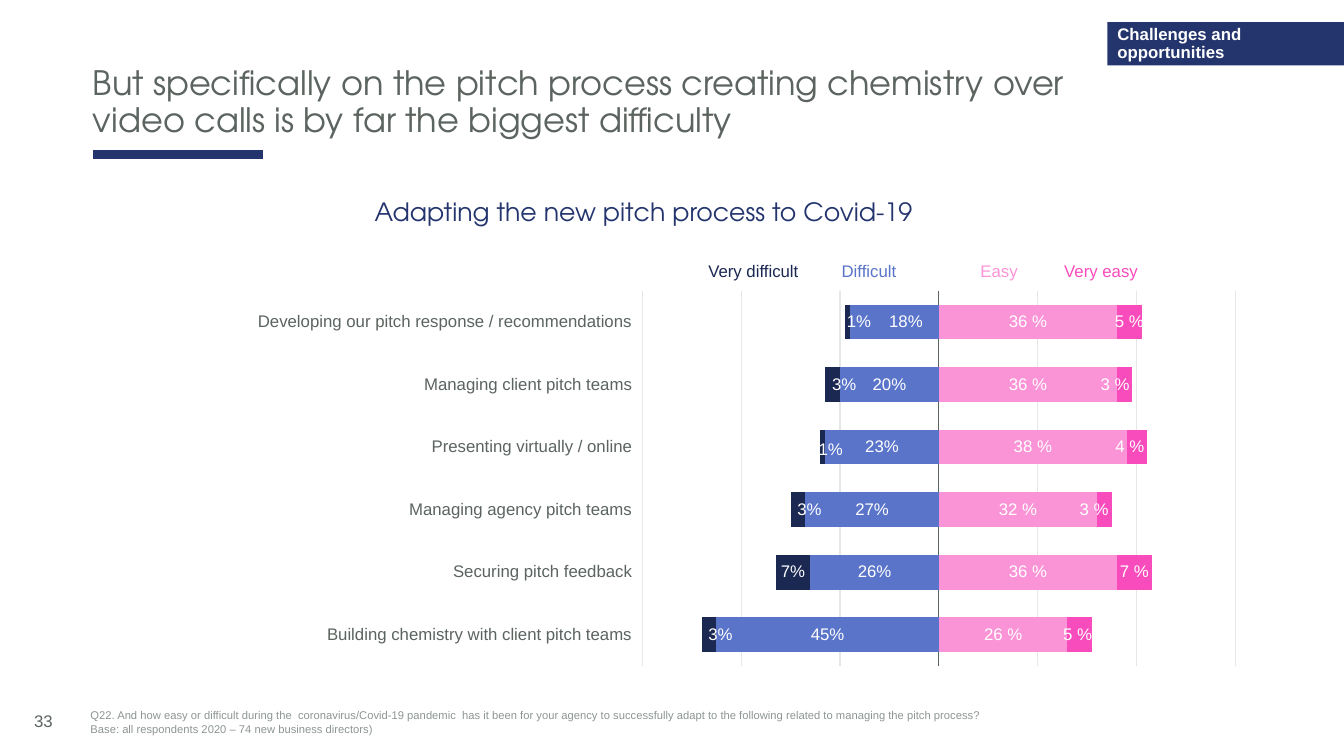
from dataclasses import dataclass

from lxml import etree
from pptx import Presentation
from pptx.chart.data import CategoryChartData
from pptx.dml.color import RGBColor
from pptx.enum.chart import XL_CHART_TYPE, XL_LABEL_POSITION, XL_TICK_LABEL_POSITION, XL_TICK_MARK
from pptx.enum.shapes import MSO_CONNECTOR, MSO_SHAPE
from pptx.enum.text import MSO_ANCHOR, PP_ALIGN
from pptx.oxml import parse_xml
from pptx.oxml.ns import nsdecls, qn
from pptx.util import Cm, Pt

BAR_STACKED = XL_CHART_TYPE.BAR_STACKED
CENTER = XL_LABEL_POSITION.CENTER
LABELS_LOW = XL_TICK_LABEL_POSITION.LOW
NO_TICKS = XL_TICK_MARK.NONE
STRAIGHT = MSO_CONNECTOR.STRAIGHT
RECTANGLE = MSO_SHAPE.RECTANGLE
TOP, MIDDLE, BOTTOM = MSO_ANCHOR.TOP, MSO_ANCHOR.MIDDLE, MSO_ANCHOR.BOTTOM
LEFT = PP_ALIGN.LEFT


@dataclass(frozen=True)
class Theme:
    heading_font: str = "TeX Gyre Adventor"
    body_font: str = "Arial"
    title_size: int = 24
    heading_size: int = 18
    body_size: int = 12
    note_size: int = 8
    navy: str = "24356E"
    grey: str = "5B645F"
    note_grey: str = "8D9691"
    grid: str = "E6E8E7"
    white: str = "FFFFFF"
    very_difficult: str = "1B2852"
    difficult: str = "5A74C9"
    easy: str = "FB94D7"
    very_easy: str = "F84CBC"


theme = Theme()


def style_font(font, size, color, name=theme.body_font):
    font.name = name
    font.size = Pt(size)
    font.color.rgb = RGBColor.from_string(color)


def add_text(page, text, place, size, color, name=theme.body_font, anchor=TOP):
    box = page.shapes.add_textbox(*(Cm(length) for length in place))
    frame = box.text_frame
    frame.word_wrap = True
    frame.vertical_anchor = anchor
    frame.text = text
    style_font(frame.paragraphs[0].font, size, color, name)
    return frame


deck = Presentation()
deck.slide_width, deck.slide_height = Cm(33.87), Cm(19.05)
page = deck.slides.add_slide(deck.slide_layouts[6])

# Title and its underline
title = add_text(
    page,
    "But specifically on the pitch process creating chemistry over video calls "
    "is by far the biggest difficulty",
    (2.34, 1.02, 26.29, 2.62), theme.title_size, theme.grey, theme.heading_font, BOTTOM)
title.margin_left = title.margin_right = 0
title.paragraphs[0].line_spacing = 0.9

underline = page.shapes.add_connector(STRAIGHT, Cm(2.34), Cm(3.89), Cm(6.63), Cm(3.89))
underline.line.color.rgb = RGBColor.from_string(theme.navy)
underline.line.width = Pt(6)
etree.SubElement(underline._element.spPr, qn("a:effectLst"))

# Diverging bars: difficult to the left of zero, easy to the right
data = CategoryChartData(number_format="0%")
data.categories = [
    "Building chemistry with client pitch teams",
    "Securing pitch feedback",
    "Managing agency pitch teams",
    "Presenting virtually / online",
    "Managing client pitch teams",
    "Developing our pitch response / recommendations",
]
data.add_series("Easy", (0.26, 0.36, 0.32, 0.38, 0.36, 0.36))
data.add_series("Very easy", (0.05, 0.07, 0.03, 0.04, 0.03, 0.05))
data.add_series("Difficult", (-0.45, -0.26, -0.27, -0.23, -0.2, -0.18))
data.add_series("Very difficult", (-0.03, -0.07, -0.03, -0.01, -0.03, -0.01))
chart = page.shapes.add_chart(
    BAR_STACKED, Cm(2.34), Cm(5.08), Cm(29.21), Cm(12.09), data).chart
chart.has_legend = False
chart.has_title = False
style_font(chart.font, 10, theme.grey)

plot = chart.plots[0]
plot.gap_width = 80
plot.overlap = 100
plot.vary_by_categories = False

category_axis = chart.category_axis
category_axis.tick_label_position = LABELS_LOW
category_axis.major_tick_mark = category_axis.minor_tick_mark = NO_TICKS
category_axis.has_major_gridlines = False
category_axis.format.line.color.rgb = RGBColor.from_string(theme.grey)
category_axis.format.line.width = Pt(0.75)
style_font(category_axis.tick_labels.font, theme.body_size, theme.grey)

value_axis = chart.value_axis
value_axis.visible = False
value_axis.minimum_scale, value_axis.maximum_scale = -0.6, 0.6
value_axis.major_unit = 0.2
value_axis.has_major_gridlines = True
grid_line = value_axis.major_gridlines.format.line
grid_line.color.rgb = RGBColor.from_string(theme.grid)
grid_line.width = Pt(0.75)

# Fixed plot area
plot_area = chart._chartSpace.chart.plotArea
for layout in plot_area.findall(qn("c:layout")):
    plot_area.remove(layout)
plot_area.insert(0, parse_xml(
    f'<c:layout {nsdecls("c")}><c:manualLayout><c:layoutTarget val="inner"/>'
    '<c:xMode val="edge"/><c:yMode val="edge"/><c:x val="0.474"/><c:y val="0.186"/>'
    '<c:w val="0.512"/><c:h val="0.782"/></c:manualLayout></c:layout>'))

# Series colours, label formats and label shifts (category: x, y as chart fractions)
series_styles = [
    (theme.easy, r"0\ %", {}),
    (theme.very_easy, r"0\ %",
     {0: (-0.002, 0), 2: (-0.009, 0), 3: (-0.006, 0), 4: (-0.008, 0)}),
    (theme.difficult, "0%;0%", {5: (0.01, 0)}),
    (theme.very_difficult, "0%;0%",
     {0: (0.01, 0), 2: (0.01, 0), 3: (0.007, 0.006), 4: (0.01, 0), 5: (0.01, 0)}),
]
for series, (color, label_format, shifts) in zip(plot.series, series_styles):
    series.format.fill.solid()
    series.format.fill.fore_color.rgb = RGBColor.from_string(color)
    series.invert_if_negative = False
    labels = series.data_labels
    labels.show_value = True
    labels.position = CENTER
    labels.number_format = label_format
    labels.number_format_is_linked = False
    style_font(labels.font, theme.body_size, theme.white)
    for index, (shift_x, shift_y) in shifts.items():
        label = series.points[index].data_label
        style_font(label.font, theme.body_size, theme.white)
        label.position = CENTER
        label_index = series._element.xpath(f'.//c:dLbl/c:idx[@val="{index}"]')[0]
        label_index.addnext(parse_xml(
            f'<c:numFmt {nsdecls("c")} formatCode="{label_format}" sourceLinked="0"/>'))
        label_index.addnext(parse_xml(
            f'<c:layout {nsdecls("c")}><c:manualLayout><c:x val="{shift_x}"/>'
            f'<c:y val="{shift_y}"/></c:manualLayout></c:layout>'))

# Section tag
tag = page.shapes.add_shape(RECTANGLE, Cm(27.91), Cm(0.56), Cm(5.96), Cm(1.09))
tag.shadow.inherit = False
tag.fill.solid()
tag.fill.fore_color.rgb = RGBColor.from_string(theme.navy)
tag.line.fill.background()
tag.text_frame.word_wrap = True
tag.text_frame.vertical_anchor = MIDDLE
tag.text_frame.text = "Challenges and opportunities"
tag_para = tag.text_frame.paragraphs[0]
tag_para.alignment = LEFT
tag_para.line_spacing = 0.9
style_font(tag_para.font, theme.body_size, theme.white)
tag_para.font.bold = True

# Page number and footnote
add_text(page, "33", (0.61, 17.65, 11.43, 1.02), theme.body_size, theme.grey, anchor=MIDDLE)
add_text(
    page,
    "Q22. And how easy or difficult during the  coronavirus/Covid-19 pandemic  has it been "
    "for your agency to successfully adapt to the following related to managing the pitch "
    "process? Base: all respondents 2020 – 74 new business directors)",
    (2.03, 17.73, 23.52, 0.94), theme.note_size, theme.note_grey)

# Chart heading and colour key
add_text(page, "Adapting the new pitch process to Covid-19", (9.19, 4.83, 15.09, 1.02),
         theme.heading_size, theme.navy, theme.heading_font)
for name, left, color in [
    ("Very difficult", 17.6, theme.very_difficult),
    ("Difficult", 20.96, theme.difficult),
    ("Easy", 24.46, theme.easy),
    ("Very easy", 26.57, theme.very_easy),
]:
    add_text(page, name, (left, 6.45, 3.35, 0.76), theme.body_size, color)

deck.save("out.pptx")
